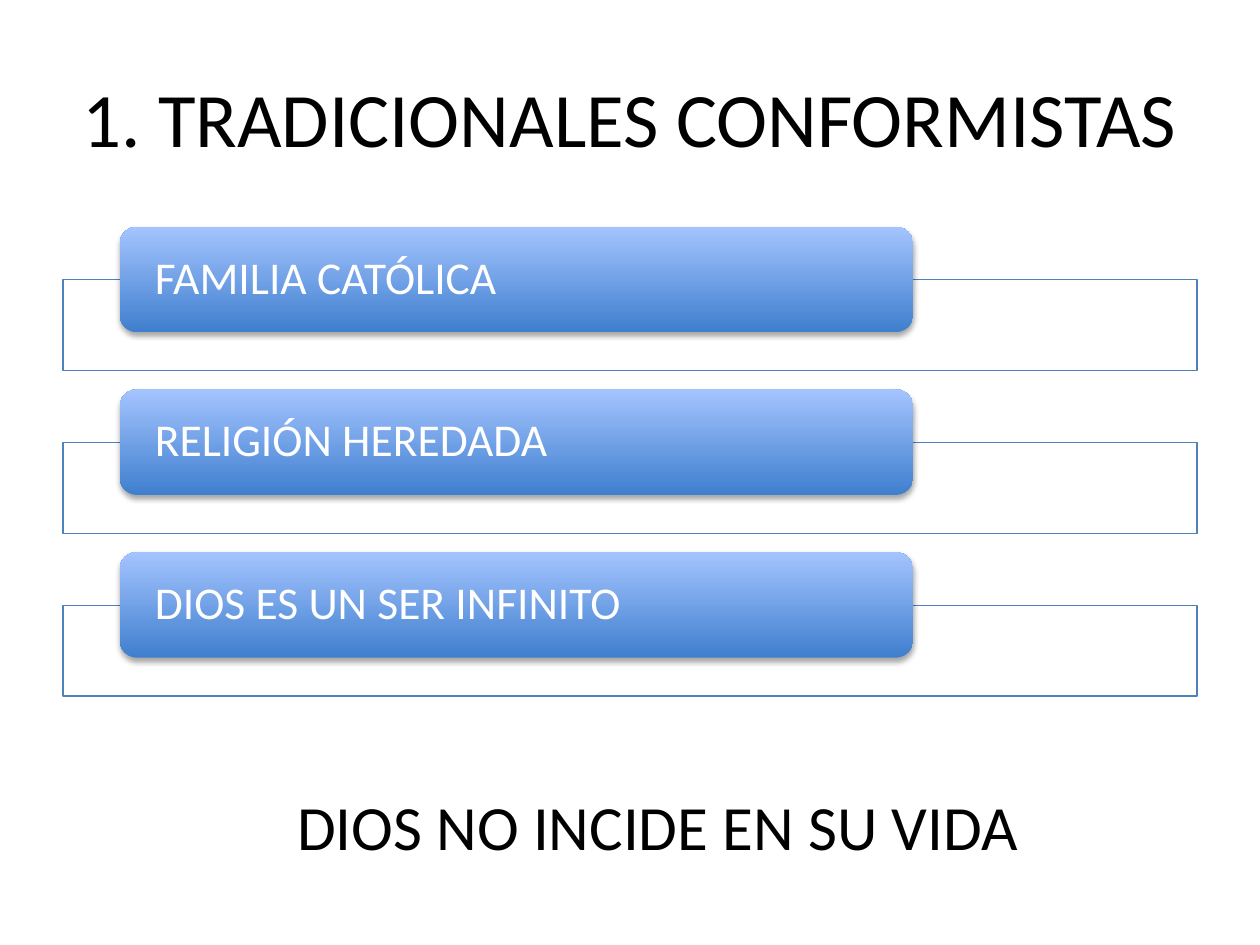
"""Build a slide with a title, three labelled bars and a closing line."""
from dataclasses import dataclass

from lxml import etree
from pptx import Presentation
from pptx import util as u
from pptx.dml.color import RGBColor
from pptx.enum import shapes, text
from pptx.oxml import ns

FONT = "Calibri"
ROW_PITCH = 3.28


@dataclass(frozen=True)
class Box:
    left: float
    top: float
    width: float
    height: float

    def lengths(self):
        return [u.Cm(v) for v in (self.left, self.top, self.width, self.height)]

    def moved_down(self, distance: float) -> "Box":
        return Box(self.left, self.top + distance, self.width, self.height)


@dataclass(frozen=True)
class Row:
    label: str
    index: int


TITLE = Box(1.27, 0.76, 22.86, 3.18)
FRAME = Box(1.27, 5.64, 22.86, 1.83)
PILL = Box(2.41, 4.57, 16, 2.13)
CLOSING = Box(5.74, 15.75, 15.21, 1.8)
ROWS = [Row(label, index) for index, label in enumerate(
    ("FAMILIA CATÓLICA", "RELIGIÓN HEREDADA", "DIOS ES UN SER INFINITO"))]


def color(value: str) -> RGBColor:
    return RGBColor.from_string(value)


def write(shape, content: str, *, size: float, ink: str = "000000",
          align=text.PP_ALIGN.LEFT, anchor=text.MSO_ANCHOR.MIDDLE,
          wrap: bool = True, spacing: float = 1.0, inset=None) -> None:
    frame = shape.text_frame
    frame.word_wrap = wrap
    frame.vertical_anchor = anchor
    if inset is not None:
        frame.margin_left = frame.margin_right = u.Cm(inset)
        frame.margin_top = frame.margin_bottom = 0
    paragraph = frame.paragraphs[0]
    paragraph.alignment = align
    paragraph.line_spacing = spacing
    run = paragraph.add_run()
    run.text = content
    run.font.name = FONT
    run.font.size = u.Pt(size)
    run.font.color.rgb = color(ink)


def add_alpha(element, percent: int) -> None:
    etree.SubElement(element, ns.qn("a:alpha"), val=str(percent * 1000))


def add_shadow(shape) -> None:
    effects = shape._element.spPr.find(ns.qn("a:effectLst"))
    shadow = etree.SubElement(
        effects, ns.qn("a:outerShdw"), blurRad=str(u.Pt(3.1)),
        dist=str(u.Pt(1.8)), dir="5400000", rotWithShape="0")
    add_alpha(etree.SubElement(shadow, ns.qn("a:srgbClr"), val="000000"), 35)


def add_frame(slide, box: Box) -> None:
    shape = slide.shapes.add_shape(shapes.MSO_SHAPE.RECTANGLE, *box.lengths())
    shape.shadow.inherit = False
    shape.fill.solid()
    shape.fill.fore_color.rgb = color("FFFFFF")
    add_alpha(shape._element.spPr.find(f"{ns.qn('a:solidFill')}/{ns.qn('a:srgbClr')}"), 90)
    shape.line.color.rgb = color("4F81BD")
    shape.line.width = u.Pt(0.75)


def add_pill(slide, box: Box, label: str) -> None:
    shape = slide.shapes.add_shape(shapes.MSO_SHAPE.ROUNDED_RECTANGLE, *box.lengths())
    shape.shadow.inherit = False
    shape.fill.gradient()
    shape.fill.gradient_angle = 90
    for stop, value in zip(shape.fill.gradient_stops, ("3F7FCE", "A4C4FF")):
        stop.color.rgb = color(value)
    shape.line.fill.background()
    add_shadow(shape)
    write(shape, label, size=26, ink="FFFFFF", spacing=0.9, inset=0.61)


def add_row(slide, row: Row) -> None:
    offset = row.index * ROW_PITCH
    add_frame(slide, FRAME.moved_down(offset))
    add_pill(slide, PILL.moved_down(offset), row.label)


def main() -> None:
    presentation = Presentation()
    presentation.slide_width = u.Cm(25.4)
    presentation.slide_height = u.Cm(19.05)
    slide = presentation.slides.add_slide(presentation.slide_layouts[5])
    title = slide.shapes.title
    title.left, title.top, title.width, title.height = TITLE.lengths()
    write(title, "1. TRADICIONALES CONFORMISTAS", size=44, align=text.PP_ALIGN.CENTER)
    for row in ROWS:
        add_row(slide, row)
    closing = slide.shapes.add_textbox(*CLOSING.lengths())
    write(closing, "DIOS NO INCIDE EN SU VIDA", size=36,
          anchor=text.MSO_ANCHOR.TOP, wrap=False)
    closing.text_frame.auto_size = text.MSO_AUTO_SIZE.SHAPE_TO_FIT_TEXT
    presentation.save("out.pptx")


if __name__ == "__main__":
    main()
